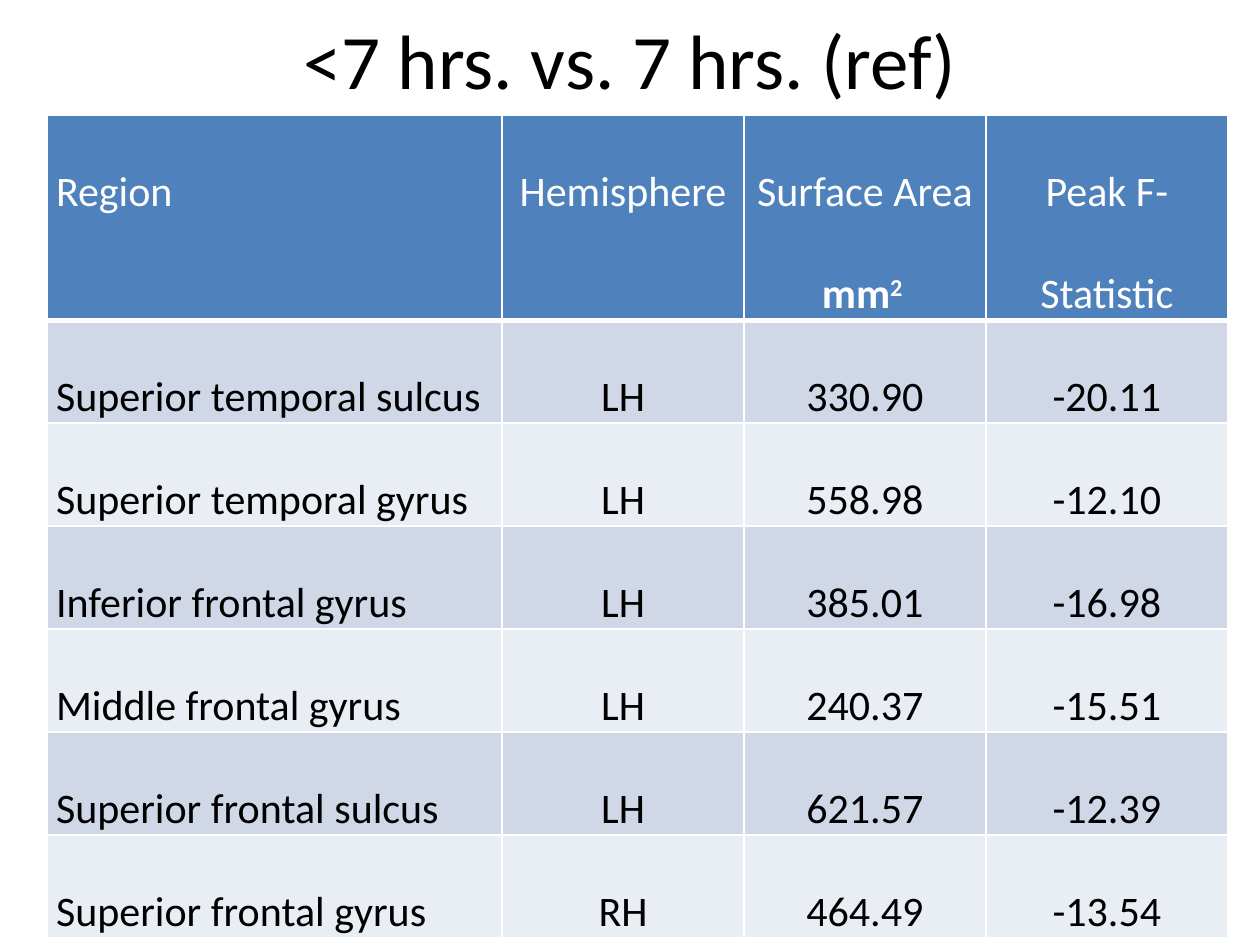
import pptx
import pptx.dml.color
import pptx.enum.text
import pptx.oxml
import pptx.oxml.ns
import pptx.util

ALIGN = pptx.enum.text.PP_ALIGN
ANCHOR = pptx.enum.text.MSO_ANCHOR
GRID_COLUMNS, GRID_ROWS = 100, 75


def colour(value):
    return pptx.dml.color.RGBColor.from_string(value)


def add_text(para, text, font="Calibri", size=24, fill="000000", bold=False, raised=False):
    span = para.add_run()
    span.text = text
    span.font.name = font
    span.font.size = pptx.util.Pt(size)
    span.font.bold = bold
    span.font.color.rgb = colour(fill)
    if raised:
        span.font._element.set("baseline", "30000")


def add_border(cell, side, fill, width):
    line = pptx.oxml.parse_xml(
        f'<a:{side} {pptx.oxml.ns.nsdecls("a")} w="{pptx.util.Pt(width)}">'
        f'<a:solidFill><a:srgbClr val="{fill}"/></a:solidFill></a:{side}>'
    )
    cell._tc.get_or_add_tcPr().append(line)


class SlideBuilder:
    header_fill = "4F81BD"
    band_fills = ("D0D8E8", "E9EDF4")
    light = "FFFFFF"
    dark = "000000"

    def __init__(self, deck):
        self.deck = deck
        self.slide = deck.slides.add_slide(deck.slide_layouts[5])

    def across(self, columns):
        return int(self.deck.slide_width * columns / GRID_COLUMNS)

    def down(self, rows):
        return int(self.deck.slide_height * rows / GRID_ROWS)

    def title(self, text, left, top, width, height):
        box = self.slide.shapes.title
        box.left, box.top = self.across(left), self.down(top)
        box.width, box.height = self.across(width), self.down(height)
        box.text_frame.vertical_anchor = ANCHOR.MIDDLE
        para = box.text_frame.paragraphs[0]
        para.alignment = ALIGN.CENTER
        add_text(para, text, size=44, fill=self.dark)

    def table(self, records, left, top, column_widths, row_height):
        frame = self.slide.shapes.add_table(
            len(records), len(column_widths), self.across(left), self.down(top),
            self.across(sum(column_widths)), self.down(row_height * len(records)),
        )
        for column, width in zip(frame.table.columns, column_widths):
            column.width = self.across(width)
        for row_number, record in enumerate(records):
            frame.table.rows[row_number].height = self.down(row_height)
            for column_number, content in enumerate(record):
                self.cell(frame.table.cell(row_number, column_number), content,
                          row_number, column_number)

    def cell(self, cell, content, row_number, column_number):
        is_header = row_number == 0
        widths = {"lnL": 1, "lnR": 1, "lnT": 3 if row_number == 1 else 1,
                  "lnB": 3 if is_header else 1}
        for side, width in widths.items():
            add_border(cell, side, self.light, width)
        cell.fill.solid()
        cell.fill.fore_color.rgb = colour(
            self.header_fill if is_header else self.band_fills[(row_number - 1) % 2])
        cell.margin_left = cell.margin_right = self.across(0.7)
        cell.margin_top = cell.margin_bottom = 0
        para = cell.text_frame.paragraphs[0]
        para.line_spacing = 2.0
        para.alignment = ALIGN.CENTER if column_number else ALIGN.LEFT
        spans = [(content, {})] if isinstance(content, str) else content
        for text, style in spans:
            add_text(para, text, fill=self.light if is_header else self.dark, **style)


def main():
    deck = pptx.Presentation()
    deck.slide_width = pptx.util.Inches(10)
    deck.slide_height = pptx.util.Inches(7.5)
    area_heading = [
        ("Surface Area ", {}),
        ("mm", {"bold": True}),
        ("2 ", {"bold": True, "raised": True}),
    ]
    records = [
        ("Region", "Hemisphere", area_heading, "Peak F-Statistic"),
        ("Superior temporal sulcus", "LH", "330.90", "-20.11"),
        ("Superior temporal gyrus", "LH", "558.98", "-12.10"),
        ("Inferior frontal gyrus", "LH", "385.01", "-16.98"),
        ("Middle frontal gyrus", "LH", "240.37", "-15.51"),
        ("Superior frontal sulcus", "LH", "621.57", "-12.39"),
        ("Superior frontal gyrus", "RH", "464.49", "-13.54"),
    ]
    builder = SlideBuilder(deck)
    builder.title("<7 hrs. vs. 7 hrs. (ref)", left=5, top=-1.6, width=90, height=12.5)
    builder.table(records, left=3.75, top=9.15,
                  column_widths=(36.1, 19.2, 19.2, 19.2), row_height=8.17)
    deck.save("out.pptx")


if __name__ == "__main__":
    main()
